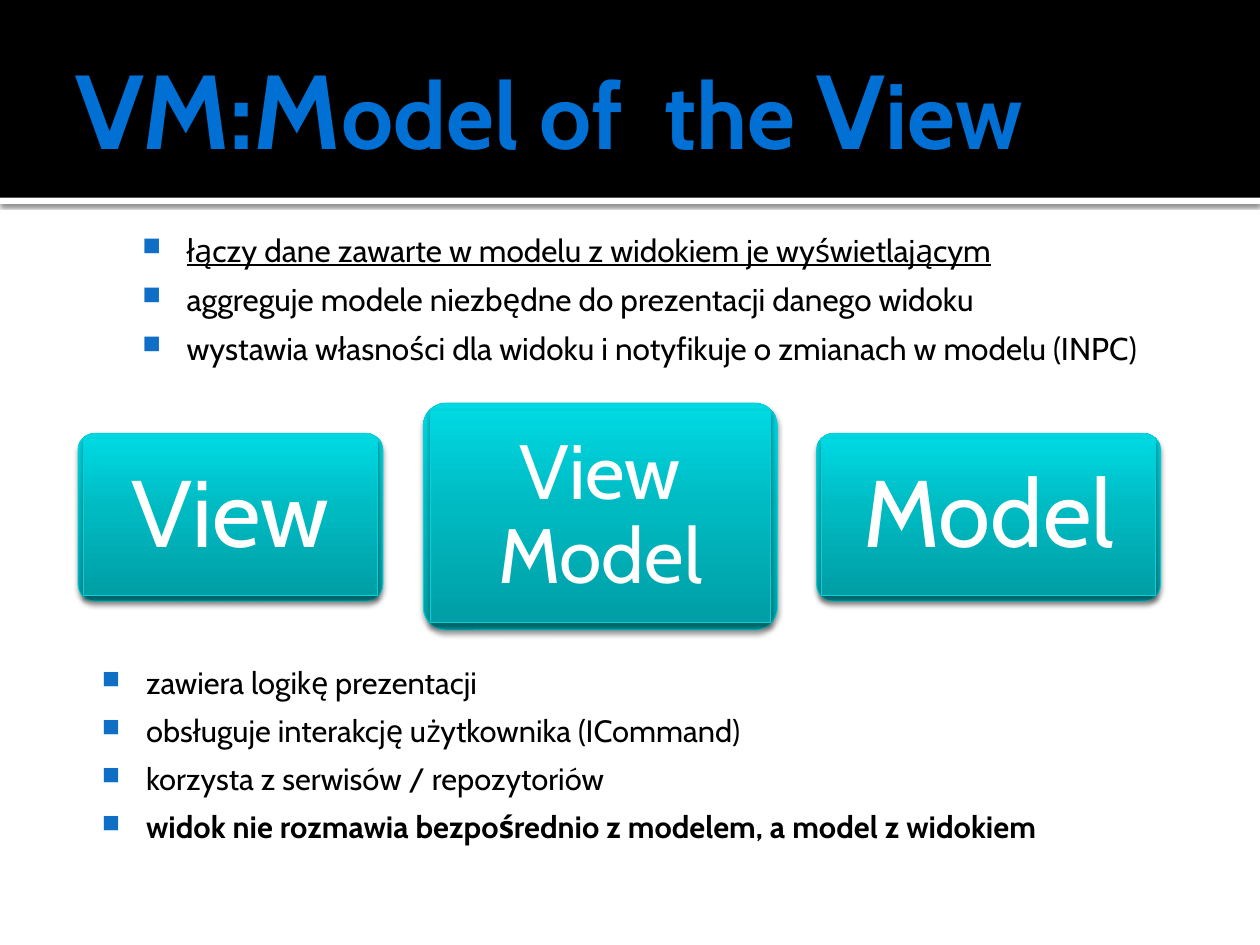
import pptx
import pptx.util
import pptx.dml.color
import pptx.enum.shapes
import pptx.enum.text
import pptx.oxml
import pptx.oxml.ns

Pt = pptx.util.Pt
RGB = pptx.dml.color.RGBColor
KIND = pptx.enum.shapes.MSO_SHAPE
ALIGN = pptx.enum.text.PP_ALIGN
ANCHOR = pptx.enum.text.MSO_ANCHOR

FONT = "Cabin"
BLACK = RGB(0x00, 0x00, 0x00)
WHITE = RGB(0xFF, 0xFF, 0xFF)
BLUE = RGB(0x00, 0x70, 0xD5)
MARK = RGB(0x0F, 0x6F, 0xC6)
EDGE = RGB(0x06, 0xD0, 0xD9)
TEAL = [(0, RGB(0x00, 0x9E, 0xA5)), (55, RGB(0x00, 0xBA, 0xC2)),
        (100, RGB(0x00, 0xD8, 0xE2))]

TITLE = [("VM:M", 60), ("odel of  the ", 53), ("V", 60), ("iew", 53)]
TOP = ["łączy dane zawarte w modelu z widokiem je wyświetlającym",
       "aggreguje modele niezbędne do prezentacji danego widoku",
       "wystawia własności dla widoku i notyfikuje o zmianach w modelu (INPC)"]
LOW = ["zawiera logikę prezentacji",
       "obsługuje interakcję użytkownika (ICommand)",
       "korzysta z serwisów / repozytoriów",
       "widok nie rozmawia bezpośrednio z modelem, a model z widokiem"]
# Label, text size, box, inset of the inner panel
CARDS = [("Model", 54, (466.6, 247.7, 196.6, 95.8), 3),
         ("View", 54, (44.6, 247.7, 174.2, 95.8), 3),
         ("View Model", 44, (241.9, 230.4, 202.3, 129.6), 4)]


def xml(text):
    return pptx.oxml.parse_xml(
        text.replace(">", " " + pptx.oxml.ns.nsdecls("a") + ">", 1))


def style(run, size, color):
    run.font.name = FONT
    run.font.size = Pt(size)
    run.font.color.rgb = color


def frame(shape, insets, anchor=ANCHOR.TOP):
    """Set wrapping, anchor and the left, top, right, bottom insets."""
    text = shape.text_frame
    text.word_wrap = True
    text.vertical_anchor = anchor
    (text.margin_left, text.margin_top,
     text.margin_right, text.margin_bottom) = map(Pt, insets)
    return text


def block(slide, kind, box):
    shape = slide.shapes.add_shape(kind, *map(Pt, box))
    shape.shadow.inherit = False
    shape.line.fill.background()
    return shape


def shade(shape, blur, drop, alpha):
    """Add a black shadow straight below."""
    effect = shape._element.spPr.find(pptx.oxml.ns.qn("a:effectLst"))
    effect.append(xml(
        f'<a:outerShdw blurRad="{Pt(blur)}" dist="{Pt(drop)}" dir="5400000" '
        f'algn="ctr" rotWithShape="0"><a:srgbClr val="{BLACK}">'
        f'<a:alpha val="{alpha * 1000}"/></a:srgbClr></a:outerShdw>'))


def band(slide, box, color):
    shape = block(slide, KIND.RECTANGLE, box)
    shape.fill.solid()
    shape.fill.fore_color.rgb = color
    return shape


def panel(slide, kind, box):
    shape = block(slide, kind, box)
    shape.fill.gradient()
    shape.fill.gradient_angle = 90
    stops = shape._element.spPr.find(".//" + pptx.oxml.ns.qn("a:gsLst"))
    for stop in list(stops):
        stops.remove(stop)
    for place, color in TEAL:
        stops.append(xml(f'<a:gs pos="{place * 1000}">'
                         f'<a:srgbClr val="{color}"/></a:gs>'))
    shape.line.color.rgb = EDGE
    shape.line.width = Pt(0.5)
    shade(shape, 3.1, 2, 38)
    return shape


def card(slide, label, size, box, inset):
    outer = panel(slide, KIND.ROUNDED_RECTANGLE, box)
    outer.adjustments[0] = 0.1
    left, top, width, height = box
    inner = panel(slide, KIND.RECTANGLE,
                  (left + inset, top + inset,
                   width - 2 * inset, height - 2 * inset))
    text = frame(inner, [18.7] * 4, ANCHOR.MIDDLE)
    text.text = label
    para = text.paragraphs[0]
    para.alignment = ALIGN.CENTER
    para.line_spacing = 0.9
    style(para.runs[0], size, WHITE)


def title(slide, box):
    shape = slide.shapes.add_textbox(*map(Pt, box))
    text = frame(shape, (7.2, 3.6, 3.6, 3.6), ANCHOR.MIDDLE)
    for words, size in TITLE:
        run = text.paragraphs[0].add_run()
        run.text = words
        style(run, size, BLUE)
        run.font.bold = True


def bullets(slide, box, lines, size):
    shape = slide.shapes.add_textbox(*map(Pt, box))
    text = frame(shape, (4.3, 7.2, 7.2, 3.6))
    text.text = "\n".join(lines)
    for para in text.paragraphs:
        para.line_spacing = 1.3
        props = para._p.get_or_add_pPr()
        props.set("marL", str(Pt(34.6)))
        props.set("indent", str(Pt(-25.2)))
        props.append(xml(f'<a:buClr><a:srgbClr val="{MARK}"/></a:buClr>'))
        props.append(xml('<a:buSzPct val="80000" ></a:buSzPct>'))
        props.append(xml('<a:buChar char="■" ></a:buChar>'))
        style(para.runs[0], size, BLACK)
    return text.paragraphs


def main():
    deck = pptx.Presentation()
    deck.slide_width, deck.slide_height = Pt(720), Pt(540)
    slide = deck.slides.add_slide(deck.slide_layouts[6])

    strip = band(slide, (0, 113, 720, 3.6), WHITE)
    shade(strip, 2.5, 0.8, 60)
    band(slide, (0, 0, 720, 113), BLACK)
    title(slide, (36, 12.2, 648, 98.6))

    top = bullets(slide, (67.7, 118.1, 635.8, 101.5), TOP, 18)
    top[0].runs[0].font.underline = True
    for item in CARDS:
        card(slide, *item)
    low = bullets(slide, (44.6, 365.8, 635.8, 123.8), LOW, 17.6)
    low[-1].runs[0].font.bold = True

    deck.save("out.pptx")


if __name__ == "__main__":
    main()
